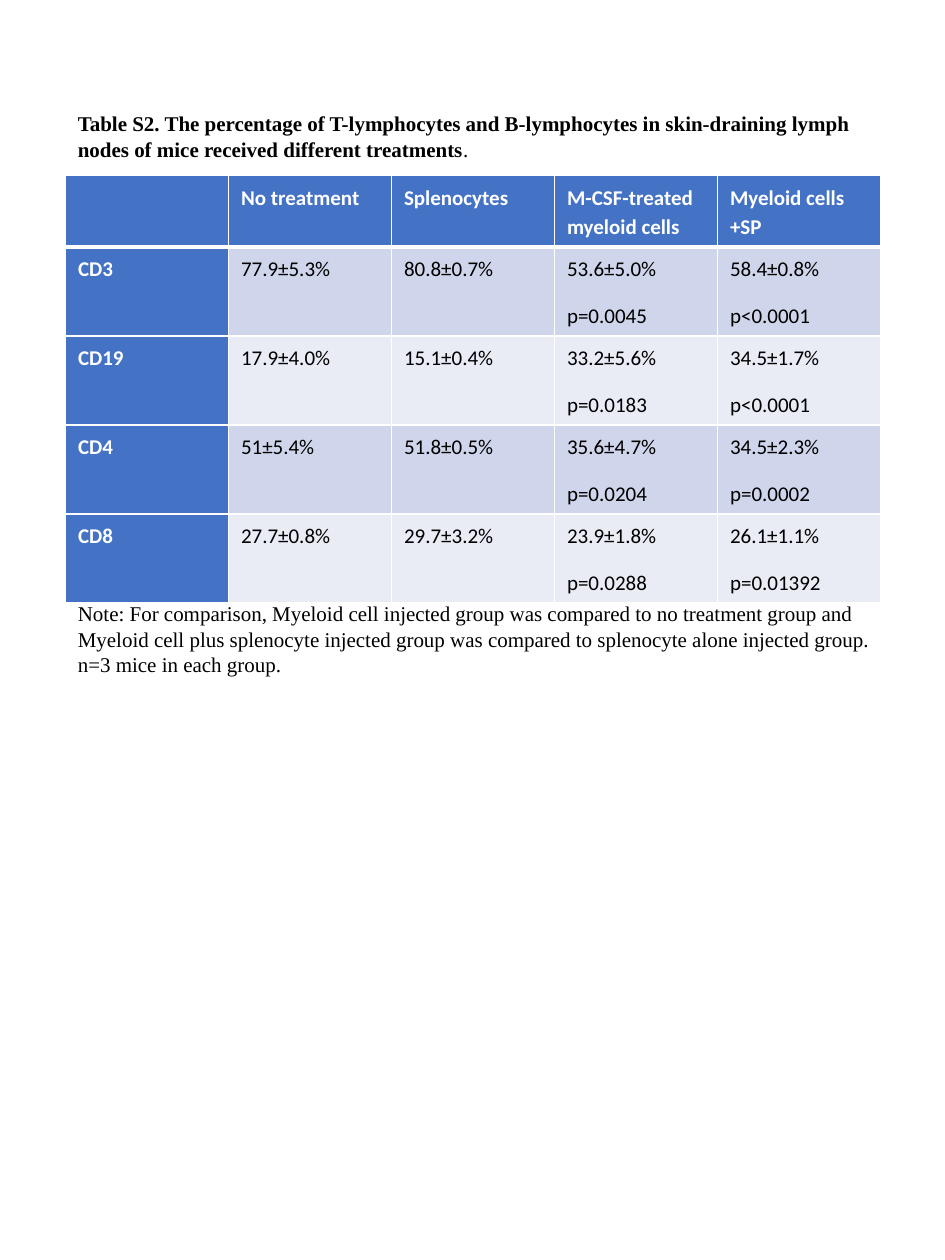
from lxml.etree import SubElement
from pptx import Presentation
from pptx.dml.color import RGBColor
from pptx.enum.text import MSO_ANCHOR, MSO_AUTO_SIZE
from pptx.oxml.ns import qn
from pptx.util import Pt

HUES = {"head": "4472C4", "odd": "CFD5EA", "even": "E9EBF5",
        "white": "FFFFFF", "black": "000000"}

TITLE = ("Table S2. The percentage of T-lymphocytes and B-lymphocytes in "
         "skin-draining lymph nodes of mice received different treatments")
NOTE = ("Note: For comparison, Myeloid cell injected group was compared to no "
        "treatment group and Myeloid cell plus splenocyte injected group was "
        "compared to splenocyte alone injected group. n=3 mice in each group.")
ROWS = [
    ["", "No treatment", "Splenocytes", "M-CSF-treated myeloid cells",
     "Myeloid cells +SP"],
    ["CD3", "77.9±5.3%", "80.8±0.7%", "53.6±5.0%\np=0.0045",
     "58.4±0.8%\np<0.0001"],
    ["CD19", "17.9±4.0%", "15.1±0.4%", "33.2±5.6%\np=0.0183",
     "34.5±1.7%\np<0.0001"],
    ["CD4", "51±5.4%", "51.8±0.5%", "35.6±4.7%\np=0.0204",
     "34.5±2.3%\np=0.0002"],
    ["CD8", "27.7±0.8%", "29.7±3.2%", "23.9±1.8%\np=0.0288",
     "26.1±1.1%\np=0.01392"],
]
LEFT = 37.4


def style(font, face, hue, bold=False):
    font.name = face
    font.size = Pt(12)
    font.bold = bold
    font.color.rgb = RGBColor.from_string(HUES[hue])


def edge(cell, side, width):
    props = cell._tc.get_or_add_tcPr()
    line = SubElement(props, qn(f"a:ln{side}"), w=str(Pt(width)))
    fill = SubElement(line, qn("a:solidFill"))
    SubElement(fill, qn("a:srgbClr"), val=HUES["white"])


deck = Presentation()
deck.slide_width, deck.slide_height = Pt(540), Pt(720)
slide = deck.slides.add_slide(deck.slide_layouts[6])

# Table of percentages
grid = slide.shapes.add_table(
    len(ROWS), len(ROWS[0]), Pt(LEFT), Pt(100.2), Pt(465.8), Pt(228.4)).table
for col in grid.columns:
    col.width = Pt(93.16)
for r, row in enumerate(ROWS):
    grid.rows[r].height = Pt(47.5 if r else 38.4)
    for c, text in enumerate(row):
        cell = grid.cell(r, c)
        head = r == 0 or c == 0
        # Borders come before the fill in the cell properties
        for side in "LRTB":
            thick = (r == 0 and side == "B") or (r == 1 and side == "T")
            edge(cell, side, 3 if thick else 1)
        band = "head" if head else "odd" if r % 2 else "even"
        cell.fill.solid()
        cell.fill.fore_color.rgb = RGBColor.from_string(HUES[band])
        cell.text_frame.text = text
        for para in cell.text_frame.paragraphs:
            para.line_spacing = 1.15
            para.space_after = Pt(10)
            for run in para.runs:
                style(run.font, "Calibri", "white" if head else "black", head)

# Title above and note below
for top, wide, high, text, bold in [(59.8, 465.8, 36, TITLE, True),
                                    (339.8, 476.6, 51, NOTE, False)]:
    frame = slide.shapes.add_textbox(
        Pt(LEFT), Pt(top), Pt(wide), Pt(high)).text_frame
    frame.word_wrap = True
    frame.auto_size = MSO_AUTO_SIZE.SHAPE_TO_FIT_TEXT
    frame.text = text
    para = frame.paragraphs[0]
    style(para.runs[0].font, "Times New Roman", "black", bold)
    if bold:
        frame.vertical_anchor = MSO_ANCHOR.MIDDLE
        dot = para.add_run()
        dot.text = "."
        style(dot.font, "Times New Roman", "black")

deck.save("out.pptx")
